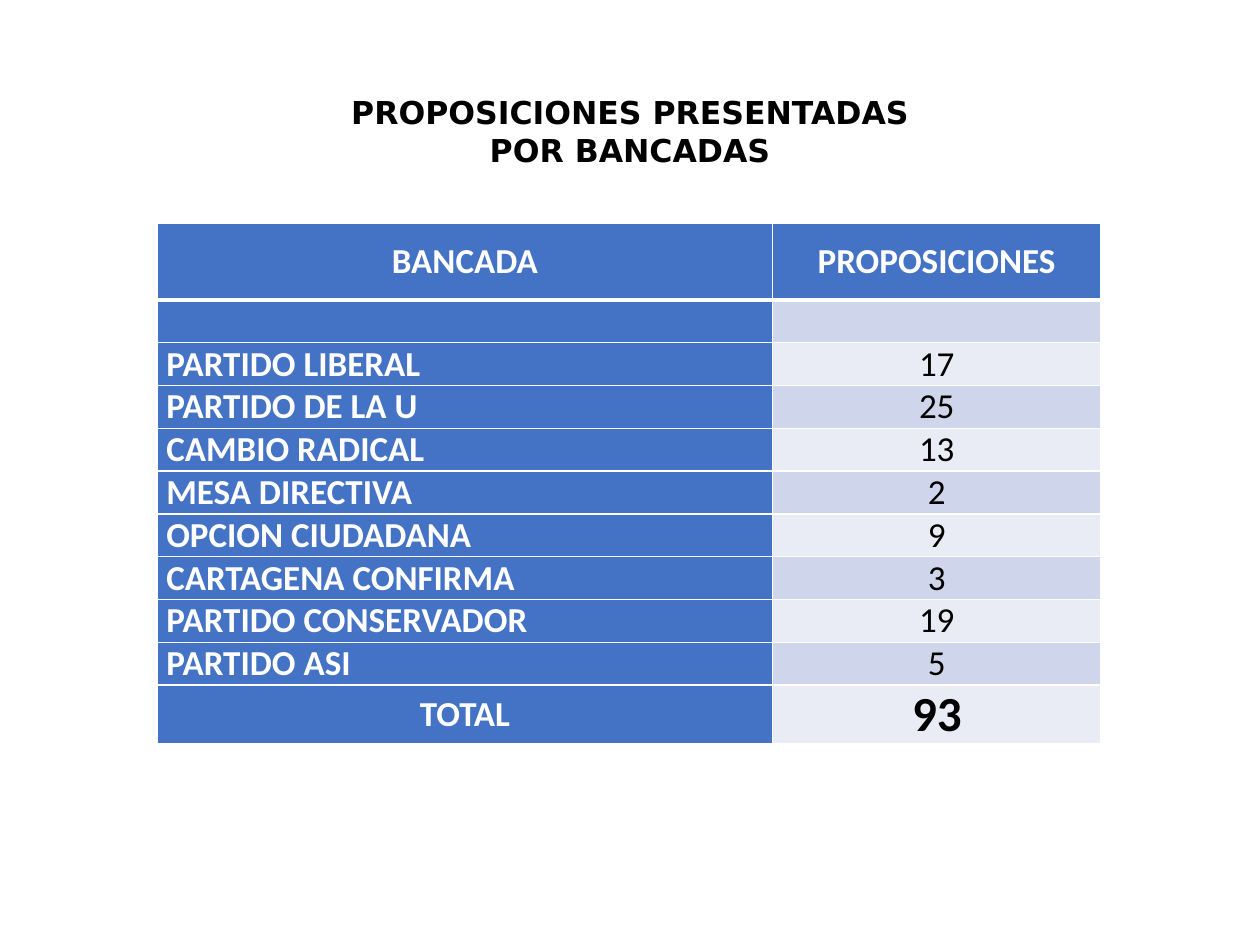
from lxml import etree
from pptx import Presentation
from pptx.dml.color import RGBColor
from pptx.enum.text import MSO_ANCHOR, MSO_AUTO_SIZE, PP_ALIGN
from pptx.oxml.ns import qn
from pptx.util import Inches, Pt

CENTER, LEFT = PP_ALIGN.CENTER, PP_ALIGN.LEFT
TOP, MIDDLE = MSO_ANCHOR.TOP, MSO_ANCHOR.MIDDLE
GROW = MSO_AUTO_SIZE.SHAPE_TO_FIT_TEXT

BLUE, WHITE, BLACK = "4472C4", "FFFFFF", "000000"
BANDS = ["E9EBF5", "CFD5EA"]
ROWS = [
    ("BANCADA", "PROPOSICIONES"),
    ("", ""),
    ("PARTIDO LIBERAL", "17"),
    ("PARTIDO DE LA U", "25"),
    ("CAMBIO RADICAL", "13"),
    ("MESA DIRECTIVA", "2"),
    ("OPCION CIUDADANA", "9"),
    ("CARTAGENA CONFIRMA", "3"),
    ("PARTIDO CONSERVADOR", "19"),
    ("PARTIDO ASI", "5"),
    ("TOTAL", "93"),
]
LAST = len(ROWS) - 1


def style(par, face, size, color, bold, align):
    par.alignment = align
    par.font.name = face
    par.font.size = Pt(size)
    par.font.bold = bold
    par.font.color.rgb = RGBColor.from_string(color)


def border(cell, widths):
    """Draw white cell edges; widths are points for left, right, top, bottom."""
    props = cell._tc.get_or_add_tcPr()
    for spot, (side, width) in enumerate(zip("LRTB", widths)):
        line = etree.Element(qn(f"a:ln{side}"), w=str(Pt(width)))
        fill = etree.SubElement(line, qn("a:solidFill"))
        etree.SubElement(fill, qn("a:srgbClr"), val=WHITE)
        props.insert(spot, line)


prs = Presentation()
prs.slide_width, prs.slide_height = Inches(10), Inches(7.5)
slide = prs.slides.add_slide(prs.slide_layouts[5])

title = slide.shapes.title
title.left, title.top = Inches(2.5), Inches(0.69)
title.width, title.height = Inches(5), Inches(0.71)
frame = title.text_frame
frame.text = "PROPOSICIONES PRESENTADAS POR BANCADAS"
frame.word_wrap = True
frame.auto_size = GROW
frame.vertical_anchor = TOP
style(frame.paragraphs[0], "DejaVu Sans", 18, BLACK, True, CENTER)

table = slide.shapes.add_table(
    len(ROWS), 2, Inches(1.25), Inches(1.77), Inches(7.49), Inches(4.09)
).table
table.horz_banding = False
table.first_col = True
for col, width in zip(table.columns, (4.88, 2.61)):
    col.width = Inches(width)

for r, texts in enumerate(ROWS):
    table.rows[r].height = Inches(0.61 if r == 0 else 0.34)
    for c, text in enumerate(texts):
        cell = table.cell(r, c)
        head = r == 0 or c == 0
        cell.text = text
        cell.vertical_anchor = MIDDLE
        cell.margin_left = cell.margin_right = Inches(0.07)
        cell.margin_top = cell.margin_bottom = 0
        border(cell, (1, 1, 3 if r == 1 else 1, 3 if r == 0 else 1))
        cell.fill.solid()
        cell.fill.fore_color.rgb = RGBColor.from_string(BLUE if head else BANDS[r % 2])
        style(
            cell.text_frame.paragraphs[0],
            "Calibri",
            28 if r == LAST and c == 1 else 20,
            WHITE if head else BLACK,
            head or r == LAST,
            LEFT if c == 0 and 0 < r < LAST else CENTER,
        )

prs.save("out.pptx")
